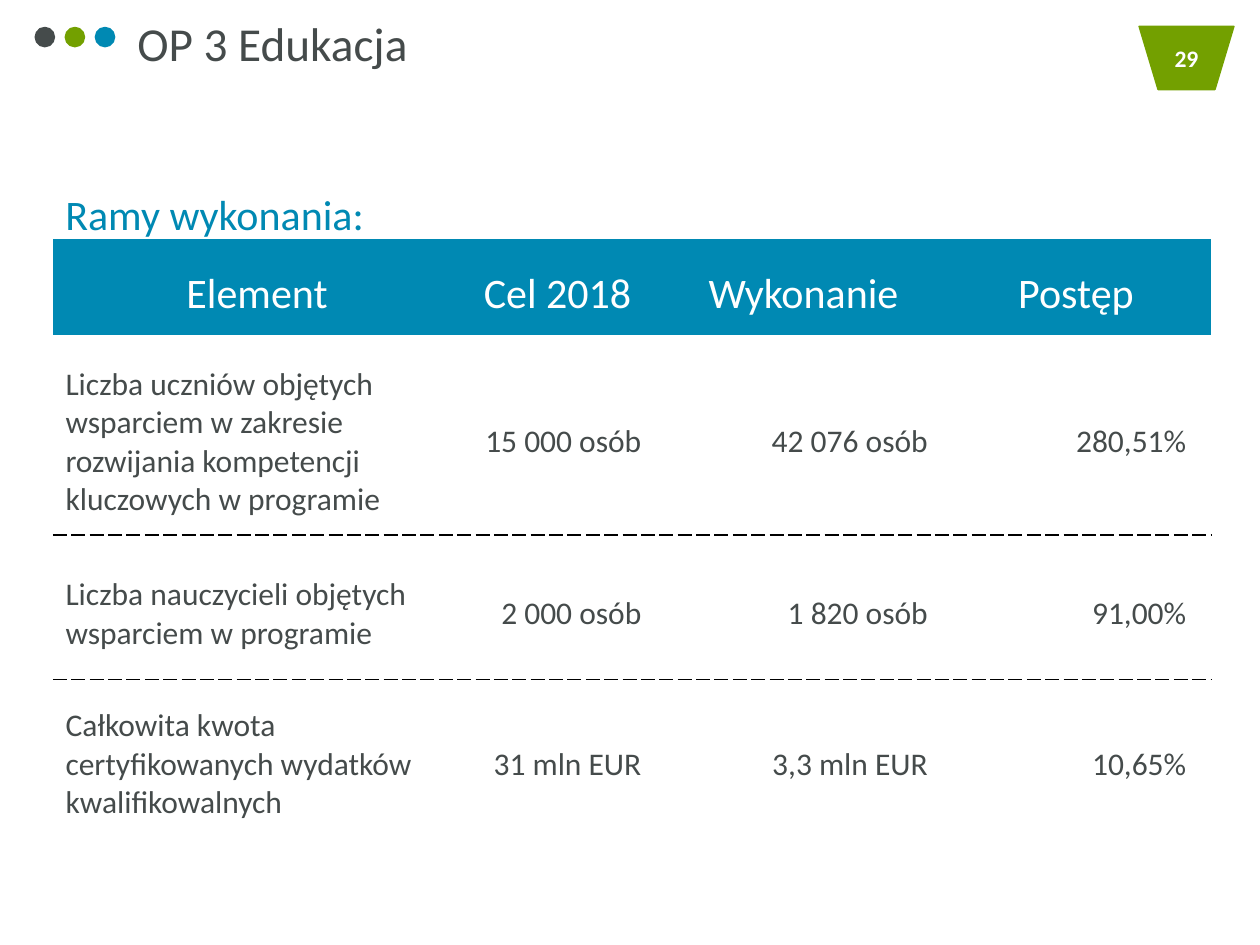
from pptx import Presentation
from pptx.dml.color import RGBColor
from pptx.enum import dml, shapes, text
from pptx.oxml import ns, parse_xml
from pptx.util import Pt

BLUE = RGBColor(0x00, 0x89, 0xB3)
GREEN = RGBColor(0x73, 0xA0, 0x00)
GRAY = RGBColor(0x45, 0x4B, 0x4B)
WHITE = RGBColor(0xFF, 0xFF, 0xFF)
LEFT, CENTER, RIGHT = text.PP_ALIGN.LEFT, text.PP_ALIGN.CENTER, text.PP_ALIGN.RIGHT
NO_GRID_STYLE = "{2D5ABB26-0587-4C30-8999-92F81FD0307C}"


def write_text(frame, content, size=18, color=GRAY, bold=False, align=LEFT, spacing=None):
    paragraph = frame.paragraphs[0]
    paragraph.alignment = align
    paragraph.line_spacing = spacing
    run = paragraph.add_run()
    run.text = content
    run.font.name = "Calibri"
    run.font.size = Pt(size)
    run.font.bold = bold
    run.font.color.rgb = color


def add_dashed_edge(cell, tag):
    """Draw one cell edge; tag is lnT for the top or lnB for the bottom."""
    properties = cell._tc.get_or_add_tcPr()
    edge = parse_xml(
        f'<a:{tag} {ns.nsdecls("a")} w="12700"><a:solidFill><a:srgbClr val="000000"/>'
        f'</a:solidFill><a:prstDash val="dash"/></a:{tag}>'
    )
    properties.append(edge)


presentation = Presentation()
presentation.slide_width = Pt(720)
presentation.slide_height = Pt(540)
slide = presentation.slides.add_slide(presentation.slide_layouts[6])

# Page number badge and the three dots
Preset = shapes.MSO_SHAPE
decorations = [(Preset.FLOWCHART_MANUAL_OPERATION, 651, 15.1, 54, 36, GREEN)]
for index, color in enumerate([GRAY, GREEN, BLUE]):
    decorations.append((Preset.OVAL, 20.2 + 17.2 * index, 15.8, 10.8, 10.8, color))

for preset, left, top, width, height, color in decorations:
    shape = slide.shapes.add_shape(preset, Pt(left), Pt(top), Pt(width), Pt(height))
    shape.shadow.inherit = False
    shape.fill.solid()
    shape.fill.fore_color.rgb = color
    shape.line.color.rgb = color
    shape.line.width = Pt(1)
    if preset == Preset.FLOWCHART_MANUAL_OPERATION:
        shape.text_frame.vertical_anchor = text.MSO_ANCHOR.MIDDLE
        write_text(shape.text_frame, "29", size=13.5, color=WHITE, bold=True, align=CENTER)

# Title and table heading
title = slide.shapes.add_textbox(Pt(78.5), Pt(8), Pt(155.5), Pt(32.4)).text_frame
title.margin_left = title.margin_right = title.margin_top = title.margin_bottom = 0
title.word_wrap = False
write_text(title, "OP 3 Edukacja", size=27)

heading = slide.shapes.add_textbox(Pt(30.24), Pt(90), Pt(624), Pt(46)).text_frame
heading.word_wrap = True
write_text(heading, "Ramy wykonania:", size=24, color=BLUE, spacing=1.5)

# Performance table
rows = [
    ("Element", "Cel 2018", "Wykonanie", "Postęp"),
    ("Liczba uczniów objętych wsparciem w zakresie rozwijania kompetencji kluczowych w programie",
     "15 000 osób", "42 076 osób", "280,51%"),
    ("Liczba nauczycieli objętych wsparciem w programie",
     "2 000 osób", "1 820 osób", "91,00%"),
    ("Całkowita kwota certyfikowanych wydatków kwalifikowalnych",
     "31 mln EUR", "3,3 mln EUR", "10,65%"),
]
column_widths = [233.3, 117.4, 163.7, 147.7]
row_heights = [55.4, 113.9, 82.7, 89.2]

table_frame = slide.shapes.add_table(
    len(rows), len(column_widths), Pt(30.24), Pt(136.3),
    Pt(sum(column_widths)), Pt(sum(row_heights)),
)
table_frame.element.find(f'.//{ns.qn("a:tableStyleId")}').text = NO_GRID_STYLE
table = table_frame.table
table.horz_banding = False
for column, width in zip(table.columns, column_widths):
    column.width = Pt(width)
for row, height in zip(table.rows, row_heights):
    row.height = Pt(height)

for row_index, values in enumerate(rows):
    for column_index, value in enumerate(values):
        cell = table.cell(row_index, column_index)
        cell.vertical_anchor = text.MSO_ANCHOR.MIDDLE
        cell.margin_left = Pt(7.2)
        cell.margin_right = Pt(14.4 if column_index else 7.2)
        cell.margin_top = Pt(11.5)
        cell.margin_bottom = Pt(3.6)
        if row_index > 1:
            add_dashed_edge(cell, "lnT")
        if 0 < row_index < len(rows) - 1:
            add_dashed_edge(cell, "lnB")
        if row_index == 0:
            cell.fill.solid()
            cell.fill.fore_color.rgb = BLUE
            write_text(cell.text_frame, value, size=24, color=WHITE, align=CENTER)
        else:
            cell.fill.background()
            write_text(cell.text_frame, value, align=RIGHT if column_index else LEFT)

presentation.save("out.pptx")
